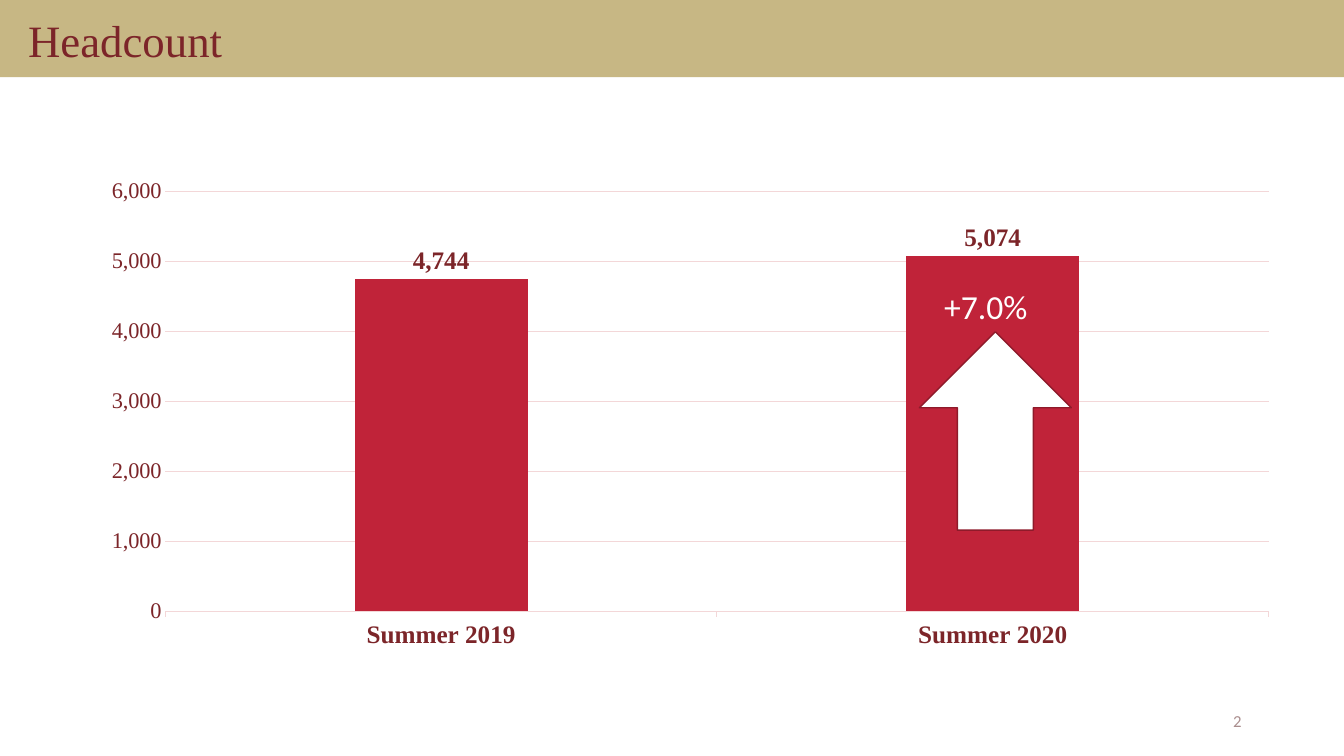
from lxml import etree
from pptx import Presentation
from pptx.chart.data import CategoryChartData
from pptx.dml.color import RGBColor
from pptx.enum.chart import XL_CHART_TYPE, XL_LABEL_POSITION, XL_TICK_MARK
from pptx.enum.shapes import MSO_SHAPE
from pptx.enum.text import MSO_ANCHOR, PP_ALIGN
from pptx.oxml import parse_xml
from pptx.oxml.ns import nsdecls
from pptx.util import Pt

COLUMNS = XL_CHART_TYPE.COLUMN_CLUSTERED
OUTSIDE_END = XL_LABEL_POSITION.OUTSIDE_END
TICK_OUT, TICK_NONE = XL_TICK_MARK.OUTSIDE, XL_TICK_MARK.NONE
RECTANGLE, DOWN_ARROW = MSO_SHAPE.RECTANGLE, MSO_SHAPE.DOWN_ARROW
TOP, MIDDLE = MSO_ANCHOR.TOP, MSO_ANCHOR.MIDDLE
LEFT, CENTER, RIGHT = PP_ALIGN.LEFT, PP_ALIGN.CENTER, PP_ALIGN.RIGHT

GOLD = RGBColor(0xC7, 0xB7, 0x84)
MAROON = RGBColor(0x7C, 0x25, 0x29)
CRIMSON = RGBColor(0xC0, 0x23, 0x39)
PINK = RGBColor(0xF3, 0xD7, 0xD8)
OUTLINE = RGBColor(0x8E, 0x1A, 0x2A)
MUTED = RGBColor(0xAA, 0x8E, 0x8E)
WHITE = RGBColor(0xFF, 0xFF, 0xFF)

SERIF, SANS = "Times New Roman", "Calibri"
NUMBER_FORMAT = "#,##0"
HEADCOUNTS = {"Summer 2019": 4744, "Summer 2020": 5074}
PLOT_LAYOUT = {"x": 0.076, "y": 0.207, "w": 0.924, "h": 0.71}


def set_format(target, values):
    for name, value in values.items():
        setattr(target, name, value)


def set_font(font, color, **values):
    set_format(font, values)
    font.color.rgb = color


def set_line(line, color, width):
    line.color.rgb = color
    line.width = Pt(width)


def add_text(slide, text, box, color, size, name,
             align=LEFT, anchor=TOP, wrap=True, spacing=1.0):
    frame = slide.shapes.add_textbox(*map(Pt, box)).text_frame
    set_format(frame, {"word_wrap": wrap, "vertical_anchor": anchor})
    paragraph = frame.paragraphs[0]
    set_format(paragraph, {"text": text, "alignment": align, "line_spacing": spacing})
    set_font(paragraph.runs[0].font, color, size=Pt(size), name=name)


def add_filled_shape(slide, kind, box, fill, outline=None, rotation=0):
    shape = slide.shapes.add_shape(kind, *map(Pt, box))
    shape.shadow.inherit = False
    shape.rotation = rotation
    shape.fill.solid()
    shape.fill.fore_color.rgb = fill
    if outline is None:
        shape.line.fill.background()
    else:
        set_line(shape.line, outline, 1)


def set_plot_layout(chart):
    plot_area = chart.plots[0]._element.getparent()
    for old_layout in plot_area.findall("{*}layout"):
        plot_area.remove(old_layout)
    layout = parse_xml(f"<c:layout {nsdecls('c')}><c:manualLayout/></c:layout>")
    settings = {"layoutTarget": "inner", "xMode": "edge", "yMode": "edge", **PLOT_LAYOUT}
    namespace = etree.QName(layout).namespace
    for name, value in settings.items():
        etree.SubElement(layout[0], f"{{{namespace}}}{name}", val=str(value))
    plot_area.insert(0, layout)


def add_headcount_chart(slide, box):
    data = CategoryChartData(number_format=NUMBER_FORMAT)
    data.categories = list(HEADCOUNTS)
    data.add_series("Series 1", list(HEADCOUNTS.values()))
    chart = slide.shapes.add_chart(COLUMNS, *map(Pt, box), data).chart
    set_format(chart, {"has_legend": False, "has_title": False})
    set_font(chart.font, MAROON, size=Pt(10), name="Arial")
    set_plot_layout(chart)

    # Columns and value labels
    plot = chart.plots[0]
    set_format(plot, {"gap_width": 219, "overlap": -27,
                      "vary_by_categories": False, "has_data_labels": True})
    fill = plot.series[0].format.fill
    fill.solid()
    fill.fore_color.rgb = CRIMSON
    labels = plot.data_labels
    set_format(labels, {"show_value": True, "position": OUTSIDE_END,
                        "number_format": NUMBER_FORMAT,
                        "number_format_is_linked": False})
    set_font(labels.font, MAROON, size=Pt(18), bold=True, name=SERIF)

    # Axes
    category_axis, value_axis = chart.category_axis, chart.value_axis
    category_axis.major_tick_mark = TICK_OUT
    set_font(category_axis.tick_labels.font, MAROON, size=Pt(18), bold=True, name=SERIF)
    set_line(category_axis.format.line, PINK, 0.75)
    set_format(value_axis, {"minimum_scale": 0, "maximum_scale": 6000,
                            "major_unit": 1000, "major_tick_mark": TICK_NONE,
                            "has_major_gridlines": True})
    set_format(value_axis.tick_labels, {"number_format": NUMBER_FORMAT,
                                        "number_format_is_linked": False})
    set_font(value_axis.tick_labels.font, MAROON, size=Pt(16), bold=False, name=SERIF)
    value_axis.format.line.fill.background()
    set_line(value_axis.major_gridlines.format.line, PINK, 0.75)


def main():
    presentation = Presentation()
    set_format(presentation, {"slide_width": Pt(960), "slide_height": Pt(540)})
    slide = presentation.slides.add_slide(presentation.slide_layouts[6])

    # Title band and page number
    add_filled_shape(slide, RECTANGLE, (0, 0, 960, 55.2), GOLD)
    add_text(slide, "2", (678, 500.5, 216, 28.75), MUTED, 12, SANS,
             align=RIGHT, anchor=MIDDLE)
    add_text(slide, "Headcount", (13, 7.2, 828, 47.5), MAROON, 32, SERIF,
             anchor=MIDDLE, spacing=0.9)

    # Headcount by term
    add_headcount_chart(slide, (53.3, 49, 853.2, 422.6))

    # Growth marker
    add_text(slide, "+7.0%", (643, 201, 122.4, 28), WHITE, 24, SANS,
             align=CENTER, wrap=False)
    add_filled_shape(slide, DOWN_ARROW, (656.7, 237, 108.5, 141.7), WHITE,
                     outline=OUTLINE, rotation=180)

    presentation.save("out.pptx")


if __name__ == "__main__":
    main()
